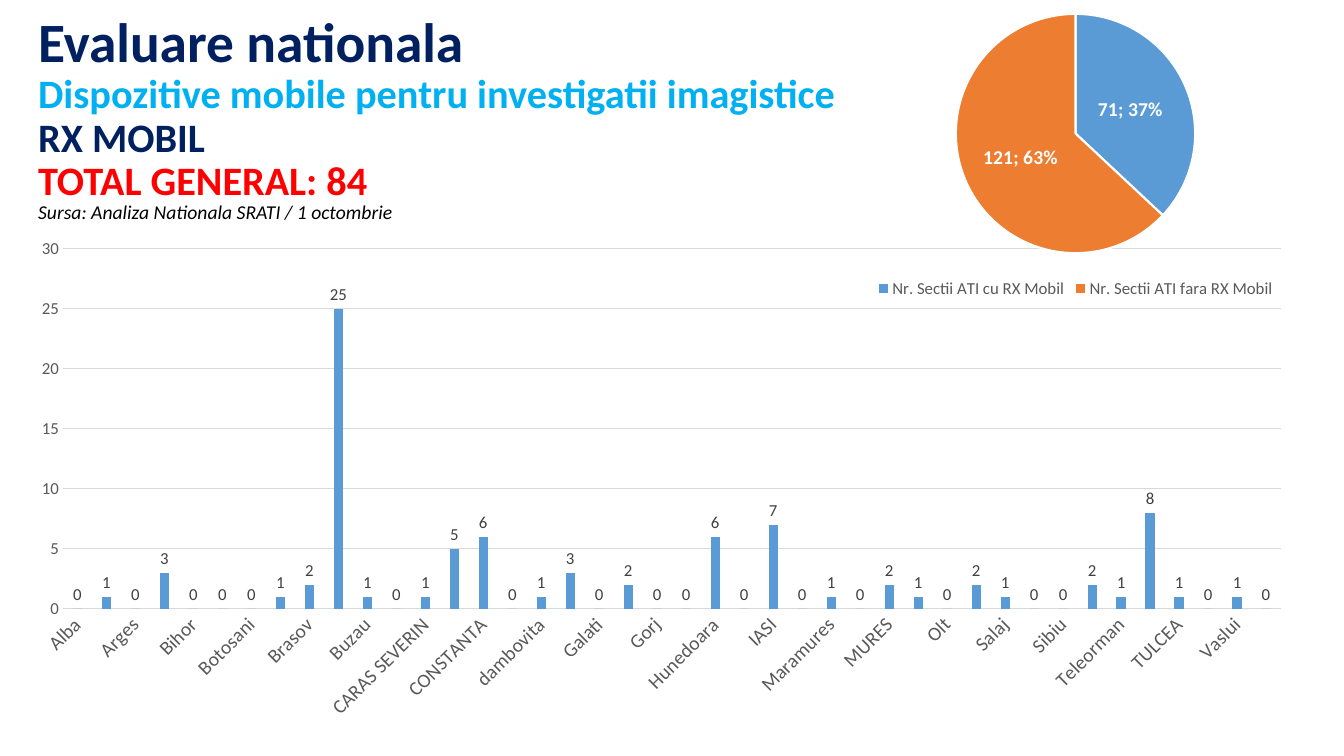
import pptx
import pptx.chart.data
import pptx.dml.color
import pptx.enum.chart
import pptx.enum.text
import pptx.util
from lxml import etree

Pt = pptx.util.Pt
chart_enum = pptx.enum.chart
COLORS = {
    "navy": "002060", "sky": "00B0F0", "red": "FF0000", "black": "000000",
    "blue": "5B9BD5", "orange": "ED7D31", "white": "FFFFFF",
    "grid": "D9D9D9", "axis": "595959", "label": "404040",
}


def rgb(name):
    return pptx.dml.color.RGBColor.from_string(COLORS[name])


def style_font(font, color, **values):
    font.color.rgb = rgb(color)
    for name, value in {"name": "Calibri", **values}.items():
        setattr(font, name, value)


presentation = pptx.Presentation()
presentation.slide_width = Pt(960)
presentation.slide_height = Pt(540)
slide = presentation.slides.add_slide(presentation.slide_layouts[6])

# Title block
title_lines = [
    ("Evaluare nationala", 39.6, "navy"),
    ("Dispozitive mobile pentru investigatii imagistice", 28.8, "sky"),
    ("RX MOBIL", 28.8, "navy"),
    ("TOTAL GENERAL: 84", 28.8, "red"),
]
title_box = slide.shapes.add_textbox(Pt(20.16), Pt(25.92), Pt(828), Pt(104.4))
title_box.text_frame.word_wrap = True
title_box.text_frame.vertical_anchor = pptx.enum.text.MSO_ANCHOR.MIDDLE
paragraph = title_box.text_frame.paragraphs[0]
paragraph.line_spacing = 0.9
for index, (text, size, color) in enumerate(title_lines):
    if index:
        paragraph.add_line_break()
    run = paragraph.add_run()
    run.text = text
    style_font(run.font, color, size=Pt(size), bold=True)

# Column chart by county
counties = {
    "Alba": 0, "Arad": 1, "Arges": 0, "Bacau": 3, "Bihor": 0,
    "BISTRITA NASAUD": 0, "Botosani": 0, "BRAILA": 1, "Brasov": 2,
    "BUCURESTI": 25, "Buzau": 1, "Calarasi": 0, "CARAS SEVERIN": 1,
    "Cluj": 5, "CONSTANTA": 6, "Covasna": 0, "dambovita": 1, "Dolj": 3,
    "Galati": 0, "GIURGIU": 2, "Gorj": 0, "Harghita": 0, "Hunedoara": 6,
    "Ialomita": 0, "IASI": 7, "Ilfov": 0, "Maramures": 1, "Mehedinti": 0,
    "MURES": 2, "NEAMT": 1, "Olt": 0, "PRAHOVA": 2, "Salaj": 1,
    "Satu Mare": 0, "Sibiu": 0, "Suceava": 2, "Teleorman": 1, "TIMIS": 8,
    "TULCEA": 1, "Valcea": 0, "Vaslui": 1, "VRANCEA": 0,
}
sections = {"Nr. Sectii ATI cu RX Mobil": 71, "Nr. Sectii ATI fara RX Mobil": 121}
chart_frames = [
    (chart_enum.XL_CHART_TYPE.COLUMN_CLUSTERED, counties, (11.52, 163.44, 921.6, 357.84)),
    (chart_enum.XL_CHART_TYPE.PIE, sections, (588.24, 0, 360, 216)),
]
charts = []
for chart_type, values, frame in chart_frames:
    chart_data = pptx.chart.data.CategoryChartData()
    chart_data.categories = list(values)
    chart_data.add_series("Series 1", list(values.values()))
    chart = slide.shapes.add_chart(chart_type, *map(Pt, frame), chart_data).chart
    chart.has_title = False
    chart.has_legend = False
    style_font(chart.font, "black", size=Pt(10))
    charts.append(chart)
column_chart, pie_chart = charts

column_plot = column_chart.plots[0]
column_plot.vary_by_categories = False
column_plot.gap_width = 219
column_plot.overlap = -27
column_series = column_plot.series[0]
column_series.format.fill.solid()
column_series.format.fill.fore_color.rgb = rgb("blue")
column_labels = column_series.data_labels
column_labels.show_value = True
column_labels.position = chart_enum.XL_LABEL_POSITION.OUTSIDE_END
style_font(column_labels.font, "label", size=Pt(12))

# Column chart axes
category_axis, value_axis = column_chart.category_axis, column_chart.value_axis
for axis, size in ((category_axis, 14), (value_axis, 12)):
    axis.major_tick_mark = chart_enum.XL_TICK_MARK.NONE
    axis.minor_tick_mark = chart_enum.XL_TICK_MARK.NONE
    style_font(axis.tick_labels.font, "axis", size=Pt(size))
category_axis._element.txPr.bodyPr.set("rot", "-2700000")
value_axis.minimum_scale, value_axis.maximum_scale, value_axis.major_unit = 0, 30, 5
value_axis.has_major_gridlines = True
value_axis.format.line.fill.background()
for line in (category_axis.format.line, value_axis.major_gridlines.format.line):
    line.color.rgb = rgb("grid")
    line.width = Pt(0.75)

# Source note
source_box = slide.shapes.add_textbox(Pt(20.16), Pt(138.96), Pt(270), Pt(24.48))
source_box.text_frame.word_wrap = False
source_run = source_box.text_frame.paragraphs[0].add_run()
source_run.text = "Sursa: Analiza Nationala SRATI / 1 octombrie"
style_font(source_run.font, "black", size=Pt(14), italic=True)

# Pie chart, brought in front of the title and the note
pie_frame = slide.shapes[2]._element
slide.shapes._spTree.append(pie_frame)
pie_series = pie_chart.plots[0].series[0]
for index, color in enumerate(("blue", "orange")):
    point_format = pie_series.points[index].format
    point_format.fill.solid()
    point_format.fill.fore_color.rgb = rgb(color)
    point_format.line.color.rgb = rgb("white")
    point_format.line.width = Pt(1.5)
pie_labels = pie_series.data_labels
pie_labels.show_value = True
pie_labels.show_percentage = True
pie_labels.position = chart_enum.XL_LABEL_POSITION.CENTER
style_font(pie_labels.font, "white", size=Pt(14), bold=True)
bubble_flag = pie_labels._element.find("{*}showBubbleSize")
separator = etree.Element(bubble_flag.tag.replace("showBubbleSize", "separator"))
separator.text = "; "
bubble_flag.addnext(separator)

pie_chart.has_legend = True
pie_chart.legend.position = chart_enum.XL_LEGEND_POSITION.BOTTOM
pie_chart.legend.include_in_layout = False
style_font(pie_chart.legend.font, "axis", size=Pt(12))

presentation.save("out.pptx")
